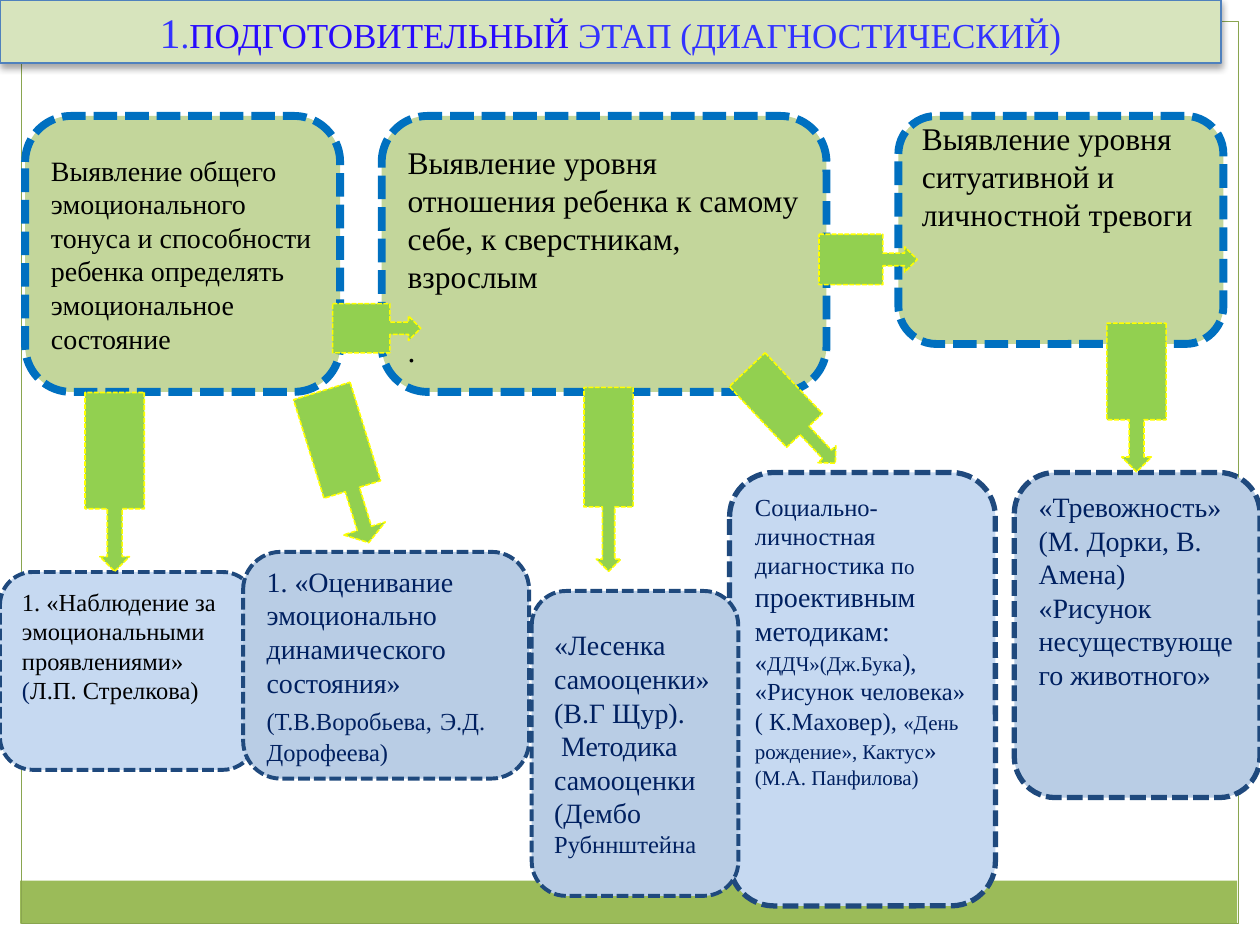
from lxml import etree
from pptx import Presentation
from pptx.dml.color import RGBColor
from pptx.enum.dml import MSO_LINE
from pptx.enum.shapes import MSO_SHAPE
from pptx.enum.text import MSO_ANCHOR, PP_ALIGN
from pptx.oxml.ns import qn
from pptx.util import Inches, Pt

RECT = MSO_SHAPE.RECTANGLE
ROUNDED = MSO_SHAPE.ROUNDED_RECTANGLE
CALLOUT = MSO_SHAPE.RIGHT_ARROW_CALLOUT
DASH = MSO_LINE.SQUARE_DOT
TOP, MIDDLE = MSO_ANCHOR.TOP, MSO_ANCHOR.MIDDLE
LEFT, CENTER = PP_ALIGN.LEFT, PP_ALIGN.CENTER
FONT = "Times New Roman"

BLACK = RGBColor(0x00, 0x00, 0x00)
NAVY = RGBColor(0x00, 0x20, 0x60)
BLUE = RGBColor(0x33, 0x33, 0xFF)
VIOLET = RGBColor(0x28, 0x0B, 0xFD)
FRAME = RGBColor(0x89, 0xA5, 0x4F)
BAND = RGBColor(0x9B, 0xBB, 0x59)
TITLE_FILL = RGBColor(0xD7, 0xE4, 0xBD)
TITLE_LINE = RGBColor(0x4F, 0x81, 0xBD)
GOAL_FILL = RGBColor(0xC3, 0xD6, 0x9B)
GOAL_LINE = RGBColor(0x00, 0x70, 0xC0)
PALE_BLUE = RGBColor(0xC6, 0xD9, 0xF1)
MID_BLUE = RGBColor(0xB9, 0xCD, 0xE5)
METHOD_LINE = RGBColor(0x1F, 0x49, 0x7D)
ARROW_FILL = RGBColor(0x92, 0xD0, 0x50)
ARROW_LINE = RGBColor(0xFF, 0xFF, 0x00)

prs = Presentation()
prs.slide_width, prs.slide_height = Inches(10), Inches(7.5)
slide = prs.slides.add_slide(prs.slide_layouts[6])


def add_figure(kind, place, fill, line=None, width=0.75, dash=None):
    figure = slide.shapes.add_shape(kind, *[Inches(v) for v in place])
    figure.shadow.inherit = False
    if fill is None:
        figure.fill.background()
    else:
        figure.fill.solid()
        figure.fill.fore_color.rgb = fill
    if line is None:
        figure.line.fill.background()
    else:
        figure.line.color.rgb = line
        figure.line.width = Pt(width)
        if dash is not None:
            figure.line.dash_style = dash
    return figure


def write_text(figure, paragraphs, align=LEFT, anchor=MIDDLE, top=0.05, bottom=0.05):
    frame = figure.text_frame
    frame.word_wrap = True
    frame.vertical_anchor = anchor
    frame.margin_top, frame.margin_bottom = Inches(top), Inches(bottom)
    for index, runs in enumerate(paragraphs):
        paragraph = frame.add_paragraph() if index else frame.paragraphs[0]
        paragraph.alignment = align
        for text, size, color in runs:
            run = paragraph.add_run()
            run.text = text
            run.font.name = FONT
            run.font.size = Pt(size)
            run.font.color.rgb = color


add_figure(RECT, (0.16, 6.99, 9.66, 0.34), BAND)
add_figure(RECT, (0.17, 0.17, 9.66, 7.16), None, FRAME)

tone = add_figure(ROUNDED, (0.2, 0.92, 2.5, 2.19), GOAL_FILL, GOAL_LINE, 4.5, DASH)
write_text(tone, [[("Выявление общего эмоционального тонуса и способности ребенка "
                    "определять эмоциональное состояние", 16, BLACK)]])

attitude = add_figure(ROUNDED, (3.03, 0.92, 3.53, 2.19), GOAL_FILL, GOAL_LINE, 4.5, DASH)
write_text(attitude, [
    [("Выявление уровня отношения ребенка к самому себе, к сверстникам, взрослым", 18, BLACK)],
    [(".", 18, BLACK)],
], anchor=TOP, top=0.11)
attitude.text_frame.paragraphs[1].space_before = Pt(21)

anxiety = add_figure(ROUNDED, (7.13, 0.92, 2.58, 1.81), GOAL_FILL, GOAL_LINE, 4.5, DASH)
write_text(anxiety, [[("Выявление уровня ситуативной и личностной тревоги", 18, BLACK)]],
           top=0, bottom=0.86)

methods = [
    ((0, 4.54, 2.03, 1.57), PALE_BLUE, 2.25, TOP, 0.04, [
        [("1. «Наблюдение за эмоциональными проявлениями» ", 14, BLACK),
         ("(", 14, NAVY), ("Л.П. Стрелкова)", 14, BLACK)],
    ]),
    ((1.93, 4.38, 2.27, 1.8), MID_BLUE, 2.25, MIDDLE, 0.05, [
        [("1. «Оценивание эмоционально динамического состояния» ", 16, NAVY),
         ("(Т.В.Воробьева,", 14, NAVY), (" ", 18, NAVY), ("Э.Д.", 14, NAVY)],
        [("Дорофеева)", 14, NAVY)],
    ]),
    ((5.79, 3.75, 2.11, 3.44), PALE_BLUE, 3, TOP, 0.05, [
        [("Социально- личностная диагностика п", 14, NAVY), ("о ", 12, NAVY),
         ("проективным методикам: ", 16, NAVY), ("«", 14, NAVY),
         ("ДДЧ»(Дж.Бука", 12, NAVY), ("), «Рисунок человека»", 14, NAVY)],
        [("( К.Маховер), ", 14, NAVY), ("«День рождение», Кактус", 12, NAVY),
         ("» ", 14, NAVY), ("(М.А. Панфилова)", 12, NAVY)],
    ]),
    ((4.22, 4.69, 1.64, 2.42), MID_BLUE, 2.25, MIDDLE, 0.05, [
        [("«Лесенка самооценки» (В.Г Щур).", 16, NAVY)],
        [(" Методика самооценки", 16, NAVY)],
        [("(Дембо ", 16, NAVY), ("Рубннштейна", 14, NAVY)],
    ]),
    ((8.05, 3.75, 1.95, 2.58), MID_BLUE, 3, TOP, 0.04, [
        [("«Тревожность»", 16, NAVY)],
        [("(М. Дорки, В. Амена) «Рисунок несуществующего животного»", 16, NAVY)],
    ]),
]
for place, fill, width, anchor, top, paragraphs in methods:
    method = add_figure(ROUNDED, place, fill, METHOD_LINE, width, DASH)
    write_text(method, paragraphs, anchor=anchor, top=top)

arrows = [
    ((2.64, 2.41, 0.7, 0.39), 0, 0.25),
    ((6.5, 1.86, 0.78, 0.4), 0, 0.25),
    ((0.2, 3.59, 1.42, 0.47), 90, 0.25),
    ((2.11, 3.47, 1.26, 0.47), 72.8, 0.37),
    ((8.43, 2.92, 1.18, 0.47), 90, 0.25),
    ((5.77, 3.11, 1.02, 0.39), 46.7, 0.25),
    ((4.1, 3.61, 1.46, 0.39), 90, 0.25),
]
for place, rotation, head_width in arrows:
    arrow = add_figure(CALLOUT, place, ARROW_FILL, ARROW_LINE, 0.9, DASH)
    arrow.rotation = rotation
    arrow.adjustments[1] = head_width

title = add_figure(RECT, (0, 0, 9.69, 0.5), TITLE_FILL, TITLE_LINE)
write_text(title, [[("1", 24, BLUE), (".", 20, BLUE), ("ПОДГОТОВИТЕЛЬНЫЙ ", 20, VIOLET),
                    ("ЭТАП (ДИАГНОСТИЧЕСКИЙ)", 20, BLUE)]], align=CENTER)
effects = title._element.spPr.find(qn("a:effectLst"))
shadow = etree.SubElement(effects, qn("a:outerShdw"), blurRad=str(Pt(4)), dist=str(Pt(2)),
                          dir="5400000", rotWithShape="0")
shade = etree.SubElement(shadow, qn("a:srgbClr"), val="000000")
etree.SubElement(shade, qn("a:alpha"), val="35000")

prs.save("out.pptx")
